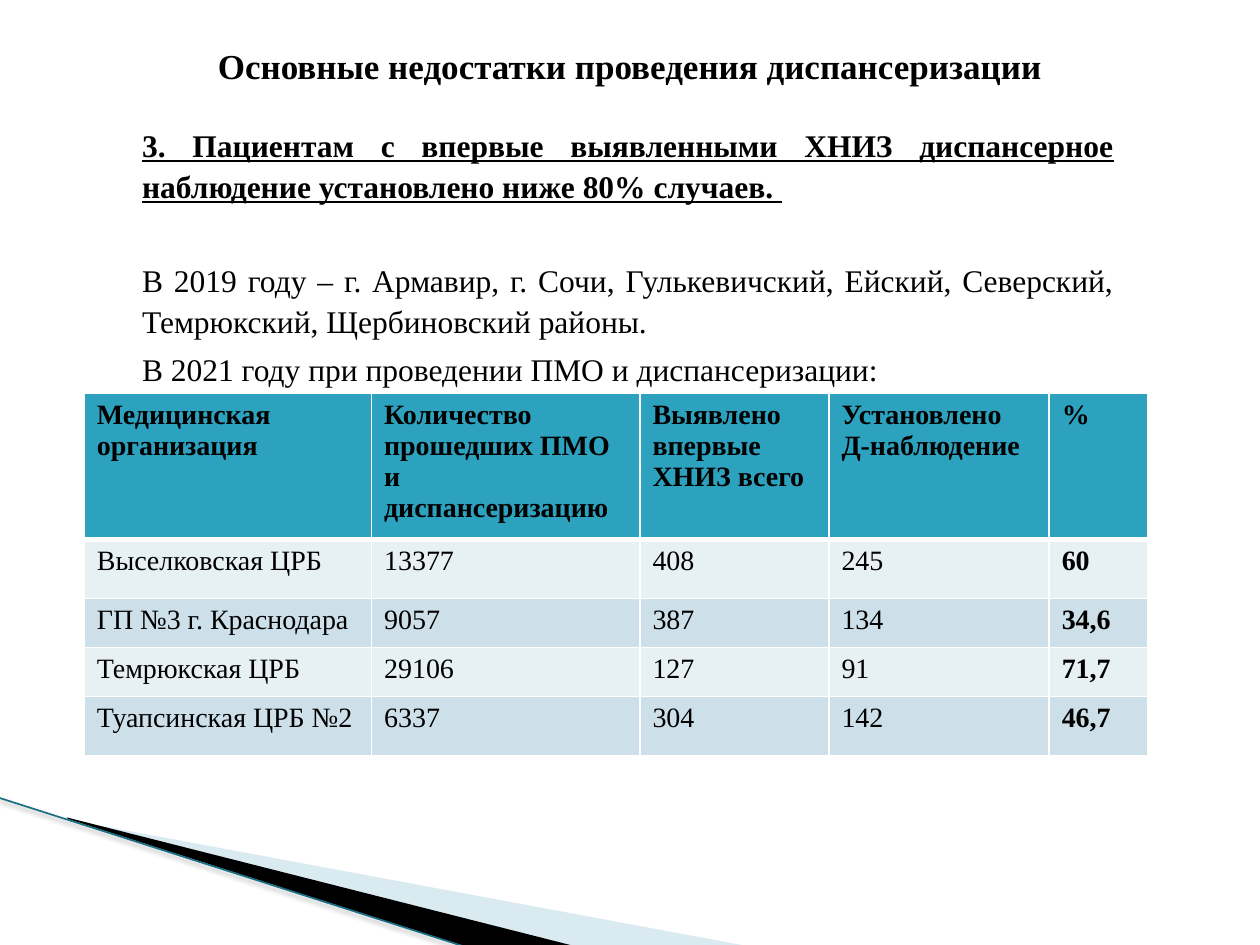
from dataclasses import dataclass

from lxml.etree import SubElement
from pptx import Presentation
from pptx.dml.color import RGBColor
from pptx.enum.shapes import MSO_CONNECTOR
from pptx.enum.text import MSO_ANCHOR, MSO_AUTO_SIZE, PP_ALIGN as Align
from pptx.oxml.ns import qn
from pptx.util import Cm, Pt

# Content
TITLE = "Основные недостатки проведения диспансеризации"
BODY = [
    ("3. Пациентам с впервые выявленными ХНИЗ диспансерное наблюдение "
     "установлено ниже 80% случаев. ", dict(bold=True, underline=True, before=0)),
    ("В 2019 году – г. Армавир, г. Сочи, Гулькевичский, Ейский, Северский, "
     "Темрюкский, Щербиновский районы.", dict(before=30)),
    ("В 2021 году при проведении ПМО и диспансеризации:", dict(before=4)),
]
ROWS = [
    ("Медицинская организация", "Количество прошедших ПМО и диспансеризацию",
     "Выявлено впервые ХНИЗ всего", "Установлено Д-наблюдение", "%"),
    ("Выселковская ЦРБ", "13377", "408", "245", "60"),
    ("ГП №3 г. Краснодара", "9057", "387", "134", "34,6"),
    ("Темрюкская ЦРБ", "29106", "127", "91", "71,7"),
    ("Туапсинская ЦРБ №2", "6337", "304", "142", "46,7"),
]

# Layout, in centimetres
TITLE_BOX = (1.27, 0.13, 22.86, 2.39)
BODY_BOX = (2.31, 2.34, 20.4, 12.6)
TABLE_CORNER = (1.7, 7.92)
COLUMN_WIDTHS = (5.79, 5.41, 3.81, 4.44, 1.98)
ROW_HEIGHTS = (2.95, 1.19, 0.99, 0.99, 1.19)
PALE_WEDGE = [(1.4, 16.53), (15.11, 19.08), (11.58, 19.08), (1.4, 16.51)]
BLACK_WEDGE = [(1.35, 16.48), (11.61, 19.08), (9.45, 19.1), (1.37, 16.51)]
EDGE = (-0.03, 16.08, 9.42, 19.1)


@dataclass(frozen=True)
class Theme:
    font: str = "Times New Roman"
    title_size: int = 20
    body_size: int = 18
    table_size: int = 16
    text: str = "000000"
    header: str = "2DA2BF"
    bands: tuple = ("E7F0F3", "CDDFE8")
    border: str = "FFFFFF"
    thin: float = 0.96
    thick: float = 3
    pale_wedge: str = "A0CBDC"
    black_wedge: str = "000000"
    edge: str = "196F85"


THEME = Theme()


def cm(values):
    return [Cm(value) for value in values]


def color(code):
    return RGBColor.from_string(code)


def add_child(parent, tag, **attributes):
    return SubElement(parent, qn(tag), {key: str(value) for key, value in attributes.items()})


def write(para, text, size, bold=False, underline=False, align=Align.LEFT,
          before=0, spacing=None, indent=None):
    if indent is not None:
        properties = para._p.get_or_add_pPr()
        properties.set("marL", str(Cm(indent)))
        properties.set("indent", "0")
        add_child(properties, "a:buNone")
    para.alignment = align
    para.space_before = Pt(before)
    para.line_spacing = spacing
    span = para.add_run()
    span.text = text
    font = span.font
    font.name, font.size = THEME.font, Pt(size)
    font.bold, font.underline = bold, underline
    font.color.rgb = color(THEME.text)


def place(box, bounds, anchor):
    box.left, box.top, box.width, box.height = cm(bounds)
    frame = box.text_frame
    frame.word_wrap = True
    frame.auto_size = MSO_AUTO_SIZE.NONE
    frame.vertical_anchor = anchor
    return frame


def add_wedge(page, points, fill, opacity=100):
    start, *others = [cm(point) for point in points]
    builder = page.shapes.build_freeform(*start)
    builder.add_line_segments(others, close=True)
    wedge = builder.convert_to_shape()
    wedge.shadow.inherit = False
    wedge.line.fill.background()
    wedge.fill.solid()
    wedge.fill.fore_color.rgb = color(fill)
    if opacity < 100:
        tint = wedge._element.spPr.find(".//" + qn("a:srgbClr"))
        add_child(tint, "a:alpha", val=opacity * 1000)


def add_edge(page):
    edge = page.shapes.add_connector(MSO_CONNECTOR.STRAIGHT, *cm(EDGE))
    edge.line.color.rgb = color(THEME.edge)
    edge.line.width = Pt(0.95)
    effects = add_child(edge._element.spPr, "a:effectLst")
    shadow = add_child(effects, "a:outerShdw", blurRad=Pt(3.1), dist=Pt(1.6),
                       dir=90 * 60000, algn="tl", rotWithShape=0)
    black = add_child(shadow, "a:srgbClr", val="000000")
    add_child(black, "a:alpha", val=38000)


def set_borders(cell, top, bottom):
    properties = cell._tc.get_or_add_tcPr()
    widths = {"L": THEME.thin, "R": THEME.thin, "T": top, "B": bottom}
    for side, width in widths.items():
        line = add_child(properties, f"a:ln{side}", w=Pt(width))
        add_child(add_child(line, "a:solidFill"), "a:srgbClr", val=THEME.border)


def add_results(page):
    size = cm((sum(COLUMN_WIDTHS), sum(ROW_HEIGHTS)))
    table = page.shapes.add_table(len(ROWS), len(COLUMN_WIDTHS),
                                  *cm(TABLE_CORNER), *size).table
    for column, width in zip(table.columns, COLUMN_WIDTHS):
        column.width = Cm(width)
    for row, height in zip(table.rows, ROW_HEIGHTS):
        row.height = Cm(height)
    for r, texts in enumerate(ROWS):
        for c, text in enumerate(texts):
            cell = table.cell(r, c)
            set_borders(cell, top=THEME.thick if r == 1 else THEME.thin,
                        bottom=THEME.thick if r == 0 else THEME.thin)
            cell.fill.solid()
            cell.fill.fore_color.rgb = color(THEME.bands[(r - 1) % 2] if r else THEME.header)
            write(cell.text_frame.paragraphs[0], text, THEME.table_size,
                  bold=r == 0 or c == len(texts) - 1)


def main():
    deck = Presentation()
    deck.slide_width, deck.slide_height = Cm(25.4), Cm(19.05)
    page = deck.slides.add_slide(deck.slide_layouts[1])

    # Corner decoration
    add_wedge(page, PALE_WEDGE, THEME.pale_wedge, opacity=40)
    add_wedge(page, BLACK_WEDGE, THEME.black_wedge)
    add_edge(page)

    # Title and body
    title = place(page.shapes.title, TITLE_BOX, MSO_ANCHOR.MIDDLE)
    write(title.paragraphs[0], TITLE, THEME.title_size, bold=True, align=Align.CENTER)
    body = place(page.placeholders[1], BODY_BOX, MSO_ANCHOR.TOP)
    for number, (text, style) in enumerate(BODY):
        para = body.add_paragraph() if number else body.paragraphs[0]
        write(para, text, THEME.body_size, align=Align.JUSTIFY,
              spacing=1.09, indent=0.3, **style)

    # Results by medical organisation
    add_results(page)
    deck.save("out.pptx")


if __name__ == "__main__":
    main()
